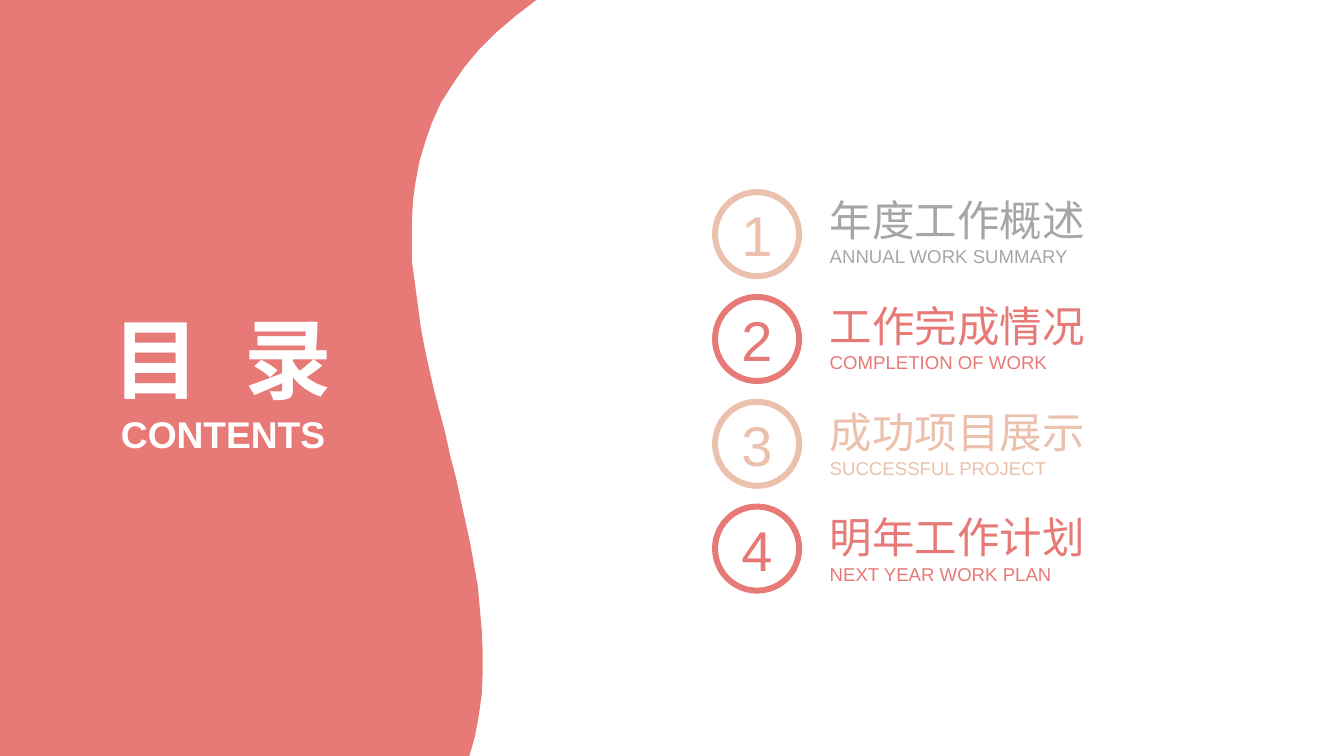
from dataclasses import dataclass

from pptx import Presentation
from pptx.dml.color import RGBColor
from pptx.enum.shapes import MSO_SHAPE as Preset
from pptx.enum.text import MSO_ANCHOR as Anchor, MSO_AUTO_SIZE as AutoSize, PP_ALIGN as Align
from pptx.util import Inches, Pt


@dataclass(frozen=True)
class Theme:
    font: str = "Arial"
    coral: str = "E77976"
    peach: str = "EBC1AD"
    gray: str = "A6A6A6"
    white: str = "FFFFFF"
    title: float = 66
    subtitle: float = 28
    number: float = 42.2
    heading: float = 32
    caption: float = 14
    ring: float = 4.5


@dataclass(frozen=True)
class Box:
    left: float
    top: float
    width: float
    height: float

    def row(self, index, count, height):
        """Box of one of several equally spaced rows that fill this box."""
        pitch = (self.height - height) / (count - 1)
        return Box(self.left, self.top + index * pitch, self.width, height)

    def share(self, left, top, width, height):
        """Box given as shares of this one."""
        return Box(self.left + left * self.width, self.top + top * self.height,
                   width * self.width, height * self.height)

    def lengths(self):
        return [Inches(value) for value in (self.left, self.top, self.width, self.height)]


THEME = Theme()
SLIDE = Box(0, 0, 14.06, 7.91)
PANEL = Box(0, 0, 5.61, 7.91)
RINGS = Box(7.48, 2.01, 0.88, 4.17)
CAPTIONS = Box(8.68, 2.03, 2.96, 4.09)
CAPTION_HEIGHT = 0.77
TITLE_GAP = 9.17  # points added after each character before the last

# Right edge of the panel from top to bottom, in hundredths of an inch
WAVE = [
    (561, 0), (539, 17), (519, 34), (501, 52), (486, 70), (473, 89), (461, 108),
    (452, 128), (445, 148), (439, 168), (435, 189), (432, 210), (431, 231),
    (431, 252), (431, 274), (434, 296), (437, 318), (440, 341), (444, 363),
    (449, 386), (454, 408), (460, 431), (466, 454), (471, 477), (477, 500),
    (482, 523), (487, 546), (492, 569), (496, 592), (500, 614), (502, 637),
    (504, 660), (505, 682), (505, 704), (504, 726), (501, 748), (497, 770), (491, 791),
]

CHAPTERS = [
    ("年度工作概述", "ANNUAL WORK SUMMARY", THEME.peach, THEME.gray),
    ("工作完成情况", "COMPLETION OF WORK", THEME.coral, THEME.coral),
    ("成功项目展示", "SUCCESSFUL PROJECT", THEME.peach, THEME.peach),
    ("明年工作计划", "NEXT YEAR WORK PLAN", THEME.coral, THEME.coral),
]


def apply(target, values):
    for name, value in values.items():
        setattr(target, name, value)


def place(shape, box):
    apply(shape, dict(zip(("left", "top", "width", "height"), box.lengths())))


def prepare(frame, anchor=Anchor.MIDDLE):
    apply(frame, {"margin_left": 0, "margin_top": 0, "margin_right": 0,
                  "margin_bottom": 0, "word_wrap": True,
                  "auto_size": AutoSize.NONE, "vertical_anchor": anchor})


def add_run(paragraph, text, size, color, bold=False):
    run = paragraph.add_run()
    run.text = text
    apply(run.font, {"name": THEME.font, "size": Pt(size), "bold": bold})
    run.font.color.rgb = RGBColor.from_string(color)
    return run


def paint(shape, fill, line=None):
    shape.shadow.inherit = False
    shape.fill.solid()
    shape.fill.fore_color.rgb = RGBColor.from_string(fill)
    if line:
        shape.line.color.rgb = RGBColor.from_string(line)
        shape.line.width = Pt(THEME.ring)
    else:
        shape.line.fill.background()


def add_panel(slide, box):
    builder = slide.shapes.build_freeform(0, 0, scale=Inches(1) / 100)
    builder.add_line_segments(WAVE + [(0, WAVE[-1][1])], close=True)
    panel = builder.convert_to_shape()
    place(panel, box)
    paint(panel, THEME.coral)


def add_titles(slide, box):
    title = slide.shapes.title
    place(title, box.share(0.135, 0.403, 0.56, 0.14))
    prepare(title.text_frame)
    paragraph = title.text_frame.paragraphs[0]
    paragraph.alignment = Align.CENTER
    style = (THEME.title, THEME.white, True)
    spaced = add_run(paragraph, "目 ", *style)
    spaced._r.get_or_add_rPr().set("spc", str(round(TITLE_GAP * 100)))
    add_run(paragraph, "录", *style)

    subtitle = slide.shapes.add_textbox(*box.share(0.139, 0.544, 0.554, 0.06).lengths())
    prepare(subtitle.text_frame, Anchor.TOP)
    paragraph = subtitle.text_frame.paragraphs[0]
    paragraph.alignment = Align.CENTER
    add_run(paragraph, "CONTENTS", THEME.subtitle, THEME.white, True)


def add_ring(slide, box, number, color):
    ring = slide.shapes.add_shape(Preset.OVAL, *box.lengths())
    paint(ring, THEME.white, color)
    prepare(ring.text_frame)
    paragraph = ring.text_frame.paragraphs[0]
    paragraph.alignment = Align.CENTER
    add_run(paragraph, str(number), THEME.number, color)


def add_caption(slide, box, heading, translation, color):
    frame = slide.shapes.add_textbox(*box.lengths()).text_frame
    prepare(frame)
    add_run(frame.paragraphs[0], heading, THEME.heading, color)
    add_run(frame.add_paragraph(), translation, THEME.caption, color)


def add_chapters(slide, rings, captions):
    count = len(CHAPTERS)
    for index, (heading, translation, ring_color, text_color) in enumerate(CHAPTERS):
        add_ring(slide, rings.row(index, count, rings.width), index + 1, ring_color)
        add_caption(slide, captions.row(index, count, CAPTION_HEIGHT),
                    heading, translation, text_color)


def add_contents_slide(presentation):
    slide = presentation.slides.add_slide(presentation.slide_layouts[5])
    add_panel(slide, PANEL)
    # The title placeholder comes first, so bring it in front of the panel
    slide.shapes._spTree.append(slide.shapes.title._element)
    add_titles(slide, PANEL)
    add_chapters(slide, RINGS, CAPTIONS)


def main():
    presentation = Presentation()
    apply(presentation, {"slide_width": Inches(SLIDE.width),
                         "slide_height": Inches(SLIDE.height)})
    add_contents_slide(presentation)
    presentation.save("out.pptx")


if __name__ == "__main__":
    main()
